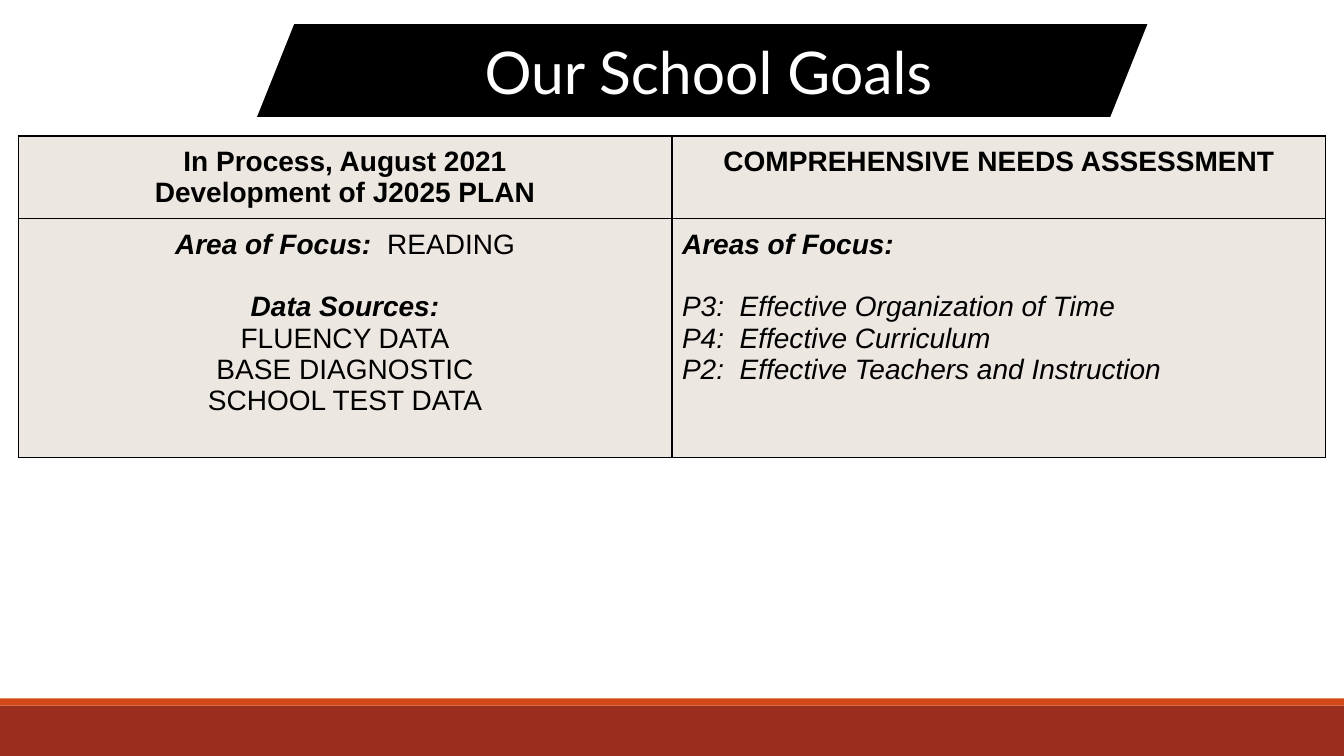
from dataclasses import dataclass

from lxml.etree import SubElement
from pptx import Presentation
from pptx.dml.color import RGBColor as RGB
from pptx.enum.shapes import MSO_SHAPE as SHAPE
from pptx.enum.text import MSO_ANCHOR as ANCHOR, MSO_AUTO_SIZE as AUTO, PP_ALIGN as ALIGN
from pptx.oxml.ns import qn
from pptx.util import Inches, Pt


@dataclass(frozen=True)
class Theme:
    black: RGB = RGB(0x00, 0x00, 0x00)
    white: RGB = RGB(0xFF, 0xFF, 0xFF)
    cell: RGB = RGB(0xEC, 0xE7, 0xE0)
    brick: RGB = RGB(0x9B, 0x2D, 0x1F)
    orange: RGB = RGB(0xD3, 0x48, 0x17)
    title_font: str = "Lato"
    body_font: str = "Arial"
    title_size: int = 42
    body_size: int = 20
    section_gap: float = 22.5
    border: int = 1


THEME = Theme()
BANNER = (Inches(2.55), Inches(0.24), Inches(8.83), Inches(0.92))
BOLD = {"bold": True}
ITALIC = {"italic": True}
LABEL = {"bold": True, "italic": True}

HEADERS = [
    [[("In Process, August 2021", BOLD)], [("Development of J2025 PLAN", BOLD)]],
    [[("COMPREHENSIVE NEEDS ASSESSMENT", BOLD)]],
]
READING = [
    [("Area of Focus:  ", LABEL), ("READING", {})],
    [("Data Sources:", LABEL)],
    [("FLUENCY DATA", {})],
    [("BASE DIAGNOSTIC", {})],
    [("SCHOOL TEST DATA", {})],
]
NEEDS = [
    [("Areas of Focus:", LABEL)],
    [("P3:  Effective Organization of Time", ITALIC)],
    [("P4:  Effective Curriculum", ITALIC)],
    [("P2:  Effective Teachers and Instruction", ITALIC)],
]


def add_run(p, text, font=THEME.body_font, size=THEME.body_size,
            color=THEME.black, bold=False, italic=False):
    r = p.add_run()
    r.text = text
    r.font.name = font
    r.font.size = Pt(size)
    r.font.color.rgb = color
    r.font.bold = bold
    r.font.italic = italic


def add_block(s, kind, box, color):
    sp = s.shapes.add_shape(kind, *box)
    sp.shadow.inherit = False
    sp.fill.solid()
    sp.fill.fore_color.rgb = color
    sp.line.fill.background()
    return sp


def add_title(s, text):
    banner = add_block(s, SHAPE.PARALLELOGRAM, BANNER, THEME.black)
    banner.adjustments[0] = 0.4
    sp = s.shapes.title
    banner._element.addnext(sp._element)
    sp.left, sp.top, sp.width, sp.height = BANNER
    tf = sp.text_frame
    tf.auto_size = AUTO.NONE
    tf.word_wrap = True
    tf.vertical_anchor = ANCHOR.MIDDLE
    tf.margin_left, tf.margin_right = Inches(0.22), Inches(0.1)
    tf.margin_top = tf.margin_bottom = Inches(0.05)
    p = tf.paragraphs[0]
    p.alignment = ALIGN.CENTER
    add_run(p, text, font=THEME.title_font, size=THEME.title_size, color=THEME.white)


def set_borders(cell):
    tc_pr = cell._tc.get_or_add_tcPr()
    for i, side in enumerate(("lnL", "lnR", "lnT", "lnB")):
        ln = SubElement(tc_pr, qn(f"a:{side}"), w=str(Pt(THEME.border)))
        fill = SubElement(ln, qn("a:solidFill"))
        SubElement(fill, qn("a:srgbClr"), val=str(THEME.black))
        tc_pr.insert(i, ln)


def fill_cell(cell, lines, align=ALIGN.CENTER, gap_before=None):
    cell.margin_left = cell.margin_right = Inches(0.1)
    cell.margin_top = cell.margin_bottom = Inches(0.1)
    cell.fill.solid()
    cell.fill.fore_color.rgb = THEME.cell
    set_borders(cell)
    tf = cell.text_frame
    for i, runs in enumerate(lines):
        p = tf.add_paragraph() if i else tf.paragraphs[0]
        p.alignment = align
        if i == gap_before:
            p.space_before = Pt(THEME.section_gap)
        for text, style in runs:
            add_run(p, text, **style)


def add_goals_table(s):
    frame = s.shapes.add_table(2, 2, Inches(0.18), Inches(1.35),
                               Inches(12.97), Inches(3.18))
    table = frame.table
    for row, height in zip(table.rows, (0.81, 2.37)):
        row.height = Inches(height)
    for col, header in enumerate(HEADERS):
        fill_cell(table.cell(0, col), header)
    fill_cell(table.cell(1, 0), READING, gap_before=1)
    fill_cell(table.cell(1, 1), NEEDS, align=ALIGN.LEFT, gap_before=1)


def main():
    prs = Presentation()
    prs.slide_width, prs.slide_height = Inches(13.33), Inches(7.5)
    s = prs.slides.add_slide(prs.slide_layouts[5])
    for top, height, color in ((7, 0.5, THEME.brick), (6.93, 0.07, THEME.orange)):
        box = (0, Inches(top), prs.slide_width, Inches(height))
        add_block(s, SHAPE.RECTANGLE, box, color)
    add_title(s, "Our School Goals")
    add_goals_table(s)
    prs.save("out.pptx")


if __name__ == "__main__":
    main()
